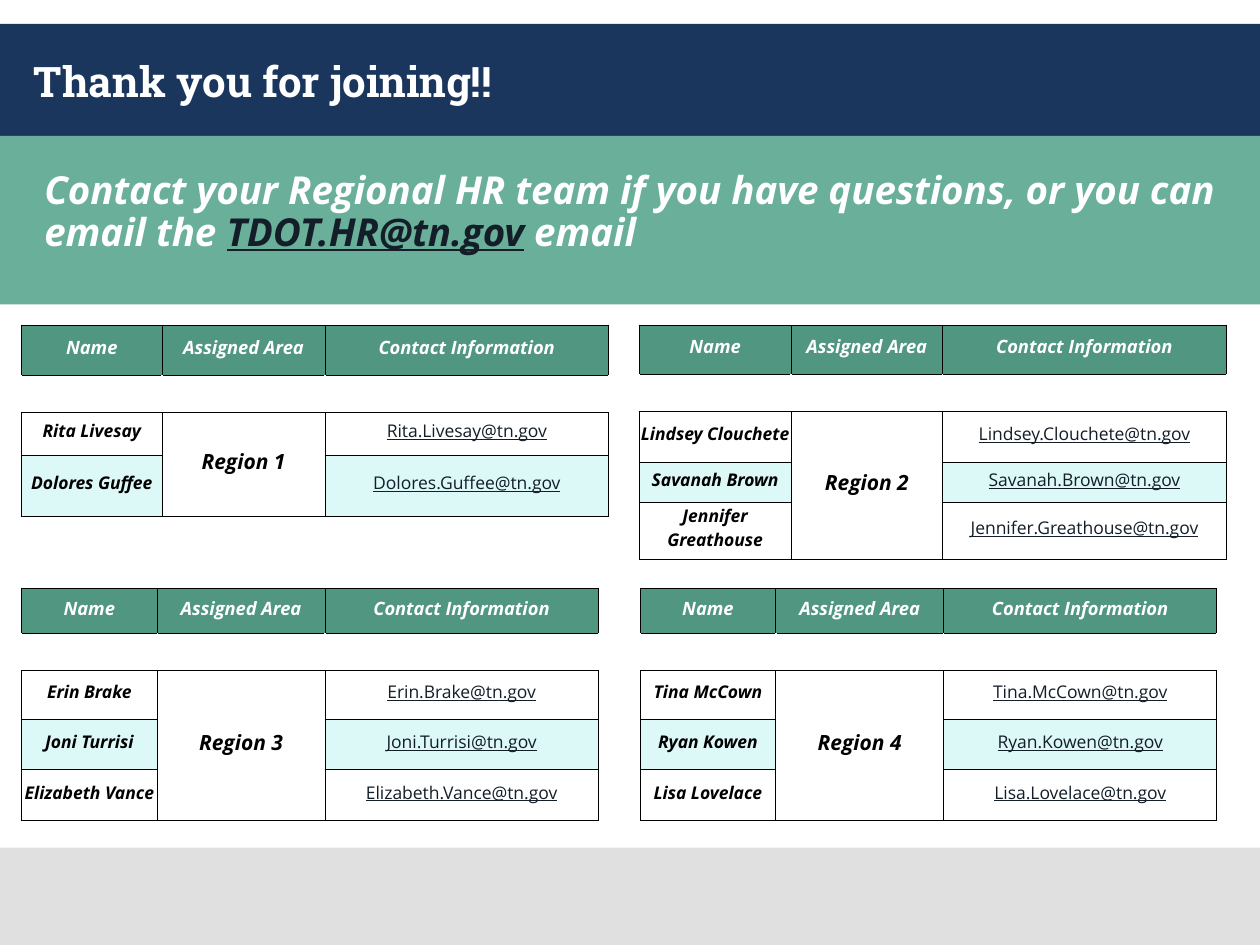
"""Build the closing slide with the regional HR contact tables."""
import lxml.etree
import pptx
import pptx.dml.color
import pptx.enum.shapes
import pptx.enum.text
import pptx.oxml.ns
import pptx.util

Cm = pptx.util.Cm
Pt = pptx.util.Pt
qn = pptx.oxml.ns.qn

COLORS = {
    "navy": "1B365D", "sage": "69AF99", "gray": "E0E0E0", "green": "509680",
    "mint": "DCF8F7", "white": "FFFFFF", "black": "000000", "ink": "131E29",
}
HEADINGS = ("Name", "Assigned Area", "Contact Information")
REGIONS = [
    ("Region 1", 0.43, 6.55, (2.84, 3.28, 5.72), (1.02, 0.75, 0.86, 1.22),
     ("Rita Livesay", "Dolores Guffee")),
    ("Region 2", 12.88, 6.55, (3.07, 3.05, 5.72), (1, 0.75, 1.02, 0.81, 1.14),
     ("Lindsey Clouchete", "Savanah Brown", "Jennifer Greathouse")),
    ("Region 3", 0.43, 11.86, (2.74, 3.38, 5.51), (0.91, 0.75, 0.98, 1.02, 1.02),
     ("Erin Brake", "Joni Turrisi", "Elizabeth Vance")),
    ("Region 4", 12.9, 11.86, (2.74, 3.38, 5.51), (0.91, 0.75, 0.98, 1.02, 1.02),
     ("Tina McCown", "Ryan Kowen", "Lisa Lovelace")),
]


def rgb(name):
    return pptx.dml.color.RGBColor.from_string(COLORS[name])


def add_text(paragraph, text, size=10, color="black", font="Open Sans",
             bold=True, italic=True, underline=False):
    run = paragraph.add_run()
    run.text = text
    run.font.name = font
    run.font.size = Pt(size)
    run.font.bold = bold
    run.font.italic = italic
    run.font.underline = underline
    run.font.color.rgb = rgb(color)


class ContactSlide:
    def __init__(self, slide):
        self.slide = slide
        self.band_count = 0

    def band(self, top, height, color):
        shape = self.slide.shapes.add_shape(
            pptx.enum.shapes.MSO_SHAPE.RECTANGLE, 0, Cm(top), Cm(25.4), Cm(height))
        shape.shadow.inherit = False
        shape.fill.solid()
        shape.fill.fore_color.rgb = rgb(color)
        shape.line.fill.background()
        self.slide.shapes._spTree.insert(2 + self.band_count, shape._element)
        self.band_count += 1

    def placeholder(self, index, left, top, width, height, anchor):
        shape = self.slide.placeholders[index]
        shape.left, shape.top = Cm(left), Cm(top)
        shape.width, shape.height = Cm(width), Cm(height)
        frame = shape.text_frame
        frame.word_wrap = True
        frame.auto_size = pptx.enum.text.MSO_AUTO_SIZE.NONE
        frame.vertical_anchor = anchor
        paragraph = frame.paragraphs[0]
        paragraph.alignment = pptx.enum.text.PP_ALIGN.LEFT
        paragraph.space_before = Pt(0)
        return paragraph

    def title(self, text):
        paragraph = self.placeholder(0, 0.43, 0.48, 24.56, 2.29,
                                     pptx.enum.text.MSO_ANCHOR.MIDDLE)
        add_text(paragraph, text, size=24, color="white", font="Roboto Slab", italic=False)

    def message(self, before, address, after):
        paragraph = self.placeholder(1, 0.64, 3.33, 24.33, 13.77,
                                     pptx.enum.text.MSO_ANCHOR.TOP)
        paragraph.line_spacing = 0.9
        properties = paragraph._p.get_or_add_pPr()
        properties.set("marL", "0")
        properties.set("indent", "0")
        lxml.etree.SubElement(properties, qn("a:buNone"))
        add_text(paragraph, before, size=22, color="white")
        add_text(paragraph, address, size=22, color="ink", underline=True)
        add_text(paragraph, after, size=22, color="white")

    def borders(self, cell, sides):
        properties = cell._tc.get_or_add_tcPr()
        for index, side in enumerate(sides):
            line = lxml.etree.Element(qn(f"a:ln{side}"), w=str(Pt(0.5)))
            fill = lxml.etree.SubElement(line, qn("a:solidFill"))
            lxml.etree.SubElement(fill, qn("a:srgbClr"), val=COLORS["black"])
            properties.insert(index, line)

    def cell(self, cell, text="", fill=None, sides="LRTB", **text_format):
        cell.margin_left = cell.margin_right = cell.margin_top = Cm(0.03)
        cell.margin_bottom = Cm(0.15)
        cell.vertical_anchor = pptx.enum.text.MSO_ANCHOR.MIDDLE
        if fill:
            cell.fill.solid()
            cell.fill.fore_color.rgb = rgb(fill)
        else:
            cell.fill.background()
        self.borders(cell, sides)
        paragraph = cell.text_frame.paragraphs[0]
        paragraph.alignment = pptx.enum.text.PP_ALIGN.CENTER
        if text:
            add_text(paragraph, text, **text_format)
        else:
            lxml.etree.SubElement(paragraph._p, qn("a:endParaRPr"), sz="1000")

    def contact_table(self, region, left, top, widths, heights, names):
        table = self.slide.shapes.add_table(
            len(heights), len(widths), Cm(left), Cm(top),
            Cm(sum(widths)), Cm(sum(heights))).table
        table.first_row = table.horz_banding = False
        for column, width in zip(table.columns, widths):
            column.width = Cm(width)
        for row, height in zip(table.rows, heights):
            row.height = Cm(height)
        for column, heading in enumerate(HEADINGS):
            self.cell(table.cell(0, column), heading, "green", size=10.5, color="white")
            self.cell(table.cell(1, column), sides="TB")
        for row, name in enumerate(names, start=2):
            fill = "mint" if row % 2 else None
            address = name.replace(" ", ".") + "@tn.gov"
            self.cell(table.cell(row, 0), name, fill)
            self.cell(table.cell(row, 1), region if row == 2 else "", size=12)
            self.cell(table.cell(row, 2), address, fill, color="ink",
                      bold=False, italic=False, underline=True)
        table.cell(2, 1).merge(table.cell(len(heights) - 1, 1))
        return table

    def thicken(self, cell, side):
        line = cell._tc.get_or_add_tcPr().find(qn(f"a:ln{side}"))
        line.set("w", str(Pt(1)))


def main():
    presentation = pptx.Presentation()
    presentation.slide_width, presentation.slide_height = Cm(25.4), Cm(19.05)
    page = ContactSlide(presentation.slides.add_slide(presentation.slide_layouts[1]))
    page.band(0.48, 2.26, "navy")
    page.band(17.09, 1.96, "gray")
    page.band(2.74, 3.4, "sage")
    page.title("Thank you for joining!!")
    page.message("Contact your Regional HR team if you have questions, or you can email the ",
                 "TDOT.HR@tn.gov", " email")
    tables = [page.contact_table(*region) for region in REGIONS]
    page.thicken(tables[1].cell(2, 2), "B")
    page.thicken(tables[1].cell(3, 2), "T")
    presentation.save("out.pptx")


if __name__ == "__main__":
    main()
